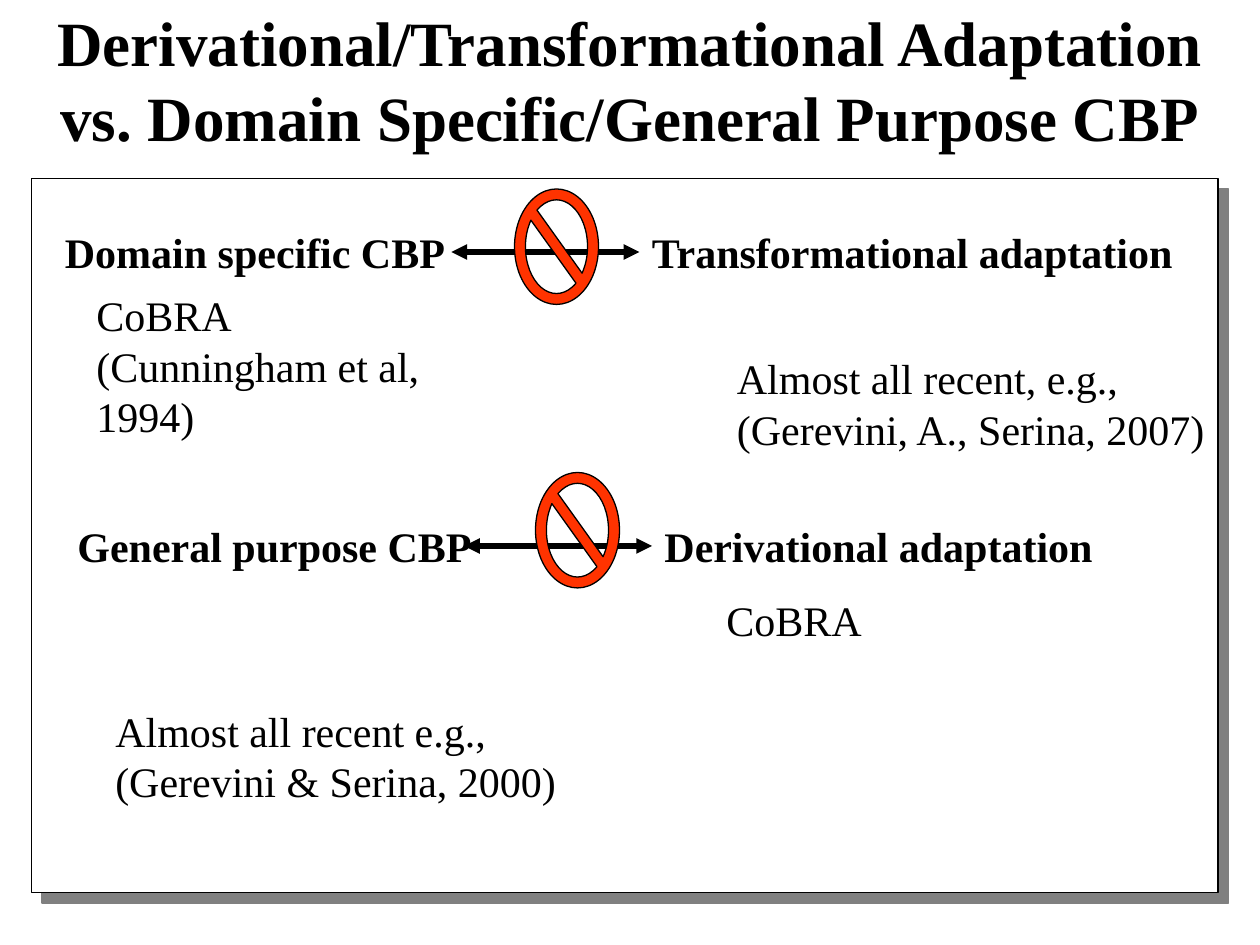
"""Build the slide that sets kinds of adaptation against kinds of CBP."""
from lxml.etree import SubElement
from pptx import Presentation
from pptx.dml.color import RGBColor
from pptx.enum.shapes import MSO_CONNECTOR, MSO_SHAPE
from pptx.enum.text import MSO_ANCHOR, MSO_AUTO_SIZE, PP_ALIGN
from pptx.oxml.ns import qn
from pptx.util import Inches, Pt


def paint(part, tone):
    if hasattr(part, "solid"):
        part.solid()
        part = part.fore_color
    part.rgb = RGBColor.from_string(tone)


def write(frame, text, size, bold, look):
    frame.text = text
    for key, value in look.items():
        setattr(frame, key, value)
    for para in frame.paragraphs:
        for key, value in {"name": "Times New Roman", "size": Pt(size), "bold": bold}.items():
            setattr(para.font, key, value)
        paint(para.font.color, "000000")


deck = Presentation()
deck.slide_width, deck.slide_height = Inches(10), Inches(7.5)
unit = deck.slide_width / 120
slide = deck.slides.add_slide(deck.slide_layouts[5])
shapes = slide.shapes

title = shapes.title
spot = {"left": 0, "top": 0, "width": deck.slide_width, "height": int(15 * unit)}
for key, value in spot.items():
    setattr(title, key, value)
look = {"auto_size": MSO_AUTO_SIZE.NONE, "word_wrap": True, "vertical_anchor": MSO_ANCHOR.MIDDLE}
write(title.text_frame,
      "Derivational/Transformational Adaptation\vvs. Domain Specific/General Purpose CBP",
      36, True, look)
title.text_frame.paragraphs[0].alignment = PP_ALIGN.CENTER

panel = shapes.add_shape(MSO_SHAPE.RECTANGLE, *(int(n * unit) for n in (3, 17, 113, 68)))
panel.shadow.inherit = False
paint(panel.fill, "FFFFFF")
paint(panel.line.fill, "000000")
panel.line.width = Pt(0.75)
cast = SubElement(panel._element.spPr.find(qn("a:effectLst")), qn("a:outerShdw"),
                  dist=str(Pt(8.5)), dir="2700000", algn="ctr", rotWithShape="0")
SubElement(cast, qn("a:srgbClr"), val="808080")

labels = [
    ("Domain specific CBP", True, 5, 21, 38.6, 6),
    ("Transformational adaptation", True, 60.9, 21, 52.3, 6),
    ("General purpose CBP", True, 6.2, 49, 40, 6),
    ("Derivational adaptation", True, 62.1, 49, 43.2, 6),
    ("CoBRA\n(Cunningham et al, 1994)", False, 8, 27, 43.4, 10.9),
    ("CoBRA", False, 68, 56, 16.3, 6),
    ("Almost all recent e.g.,\n(Gerevini & Serina, 2000)", False, 9.8, 66.6, 44.8, 10.9),
    ("Almost all recent, e.g.,\n(Gerevini, A., Serina, 2007)", False, 69, 33, 47.4, 10.9),
]
look = {"auto_size": MSO_AUTO_SIZE.SHAPE_TO_FIT_TEXT, "word_wrap": False}
boxes = {}
for text, bold, *grid in labels:
    box = shapes.add_textbox(*(int(n * unit) for n in grid))
    write(box.text_frame, text, 24, bold, look)
    boxes[text] = box

links = [
    ("Transformational adaptation", 43, 24, 49, 18),
    ("Derivational adaptation", 44.2, 52, 51, 45),
]
for goal, left, top, *sign in links:
    start = int(left * unit), int(top * unit)
    arrow = shapes.add_connector(MSO_CONNECTOR.STRAIGHT, *start, *start)
    arrow.end_connect(boxes[goal], 1)
    paint(arrow.line.fill, "000000")
    arrow.line.width = Pt(3)
    for end in ("a:headEnd", "a:tailEnd"):
        SubElement(arrow.line._get_or_add_ln(), qn(end), type="triangle")
    SubElement(arrow._element.spPr, qn("a:effectLst"))

    ban = shapes.add_shape(MSO_SHAPE.NO_SYMBOL, *(int(n * unit) for n in (*sign, 8, 11)))
    ban.adjustments[0] = 0.13
    ban.shadow.inherit = False
    paint(ban.fill, "FF3300")
    paint(ban.line.fill, "000000")
    ban.line.width = Pt(0.75)

deck.save("out.pptx")
